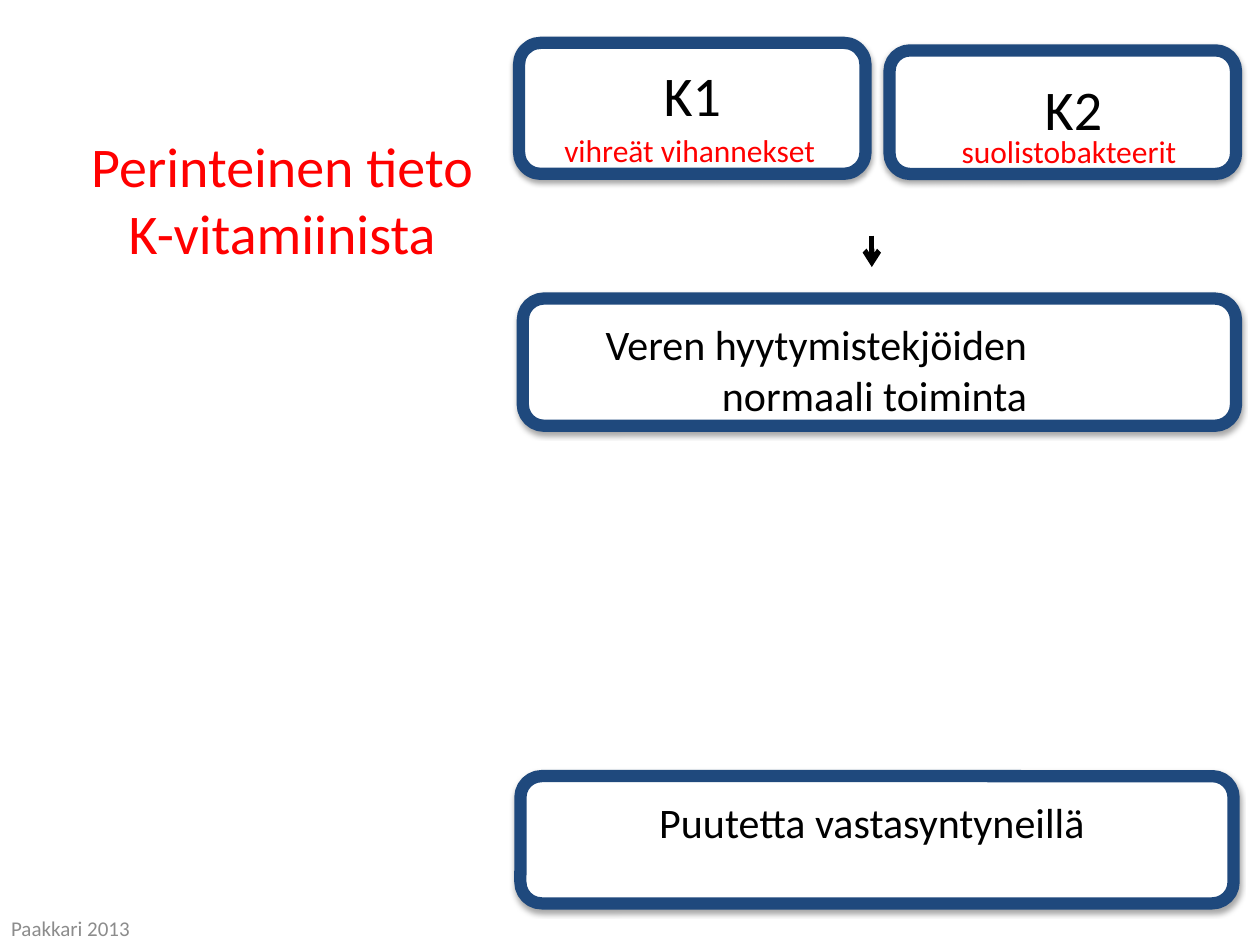
import lxml.etree
import pptx
import pptx.dml.color
import pptx.enum.shapes
import pptx.enum.text
import pptx.oxml
import pptx.oxml.ns
import pptx.util

Pt = pptx.util.Pt
ALIGN = pptx.enum.text.PP_ALIGN
ANCHOR = pptx.enum.text.MSO_ANCHOR
AUTO_SIZE = pptx.enum.text.MSO_AUTO_SIZE

COLORS = {
    "background": "FFFFFF",
    "border": "1F497D",
    "text": "000000",
    "accent": "FF0000",
    "footer": "8C8C8C",
}

SHADOW_XML = (
    f'<a:effectLst {pptx.oxml.ns.nsdecls("a")}>'
    '<a:outerShdw blurRad="40000" dist="23000" dir="5400000" rotWithShape="0">'
    '<a:srgbClr val="000000"><a:alpha val="35000"/></a:srgbClr>'
    "</a:outerShdw></a:effectLst>"
)


def color(name):
    return pptx.dml.color.RGBColor.from_string(COLORS[name])


def write_text(frame, text, *, size, font, color_name="text", align=ALIGN.CENTER):
    paragraph = frame.paragraphs[0]
    paragraph.alignment = align
    run = paragraph.add_run()
    run.text = text
    run.font.size = Pt(size)
    run.font.name = font
    run.font.color.rgb = color(color_name)


class SlideBuilder:
    """Holds the style and the current slide."""

    font = "Calibri"
    border_width = 7
    arrow_width = 3

    def __init__(self, slide):
        self.slide = slide

    def box(self, left, top, width, height):
        shape = self.slide.shapes.add_shape(
            pptx.enum.shapes.MSO_SHAPE.ROUNDED_RECTANGLE,
            Pt(left), Pt(top), Pt(width), Pt(height))
        shape.fill.solid()
        shape.fill.fore_color.rgb = color("background")
        shape.line.color.rgb = color("border")
        shape.line.width = Pt(self.border_width)
        shape._element.spPr.append(pptx.oxml.parse_xml(SHADOW_XML))

    def text(self, text, left, top, width, height, *, anchor=ANCHOR.TOP,
             grow=True, margin_right=7.2, **text_format):
        shape = self.slide.shapes.add_textbox(
            Pt(left), Pt(top), Pt(width), Pt(height))
        frame = shape.text_frame
        frame.word_wrap = True
        frame.auto_size = AUTO_SIZE.SHAPE_TO_FIT_TEXT if grow else AUTO_SIZE.NONE
        frame.vertical_anchor = anchor
        frame.margin_right = Pt(margin_right)
        write_text(frame, text, font=self.font, **text_format)

    def down_arrow(self, x, top, bottom):
        connector = self.slide.shapes.add_connector(
            pptx.enum.shapes.MSO_CONNECTOR.STRAIGHT,
            Pt(x), Pt(top), Pt(x), Pt(bottom))
        connector.line.color.rgb = color("text")
        connector.line.width = Pt(self.arrow_width)
        qn = pptx.oxml.ns.qn
        lxml.etree.SubElement(
            connector.line._get_or_add_ln(), qn("a:tailEnd"), type="arrow")
        lxml.etree.SubElement(connector._element.spPr, qn("a:effectLst"))


def main():
    presentation = pptx.Presentation()
    presentation.slide_width = Pt(720)
    presentation.slide_height = Pt(540)
    builder = SlideBuilder(
        presentation.slides.add_slide(presentation.slide_layouts[6]))

    # Title
    builder.text("Perinteinen tieto K-vitamiinista", 36, 21.6, 250.6, 183.6,
                 size=32, color_name="accent", anchor=ANCHOR.MIDDLE, grow=False)

    # Vitamin forms and their sources
    builder.box(508.3, 28.8, 198, 70.6)
    builder.box(296.6, 24.5, 198, 74.9)
    builder.text("K2", 562.3, 38.9, 102.2, 46, size=32)
    builder.text("K1", 344.2, 31, 103, 46, size=32)
    builder.text("vihreät vihannekset", 310.3, 71.3, 167.8, 29,
                 size=18, color_name="accent")
    builder.text("suolistobakteerit", 532.8, 72, 156.2, 29,
                 size=18, color_name="accent")

    # Effect on blood clotting
    builder.down_arrow(498.2, 134.6, 152.6)
    builder.box(298.8, 170.6, 407.5, 72.7)
    builder.text("Veren hyytymistekjöiden normaali toiminta",
                 310.3, 178.6, 378.7, 65.5, size=24,
                 align=ALIGN.RIGHT, margin_right=102)

    # Deficiency
    builder.box(297.4, 443.5, 407.5, 72.7)
    builder.text("Puutetta vastasyntyneillä", 308.9, 451.4, 378.7, 36, size=24)

    # Footer
    builder.text("Paakkari 2013", -0.7, 516.2, 167.8, 28.8, size=12,
                 color_name="footer", align=ALIGN.LEFT,
                 anchor=ANCHOR.MIDDLE, grow=False)

    presentation.save("out.pptx")


if __name__ == "__main__":
    main()
